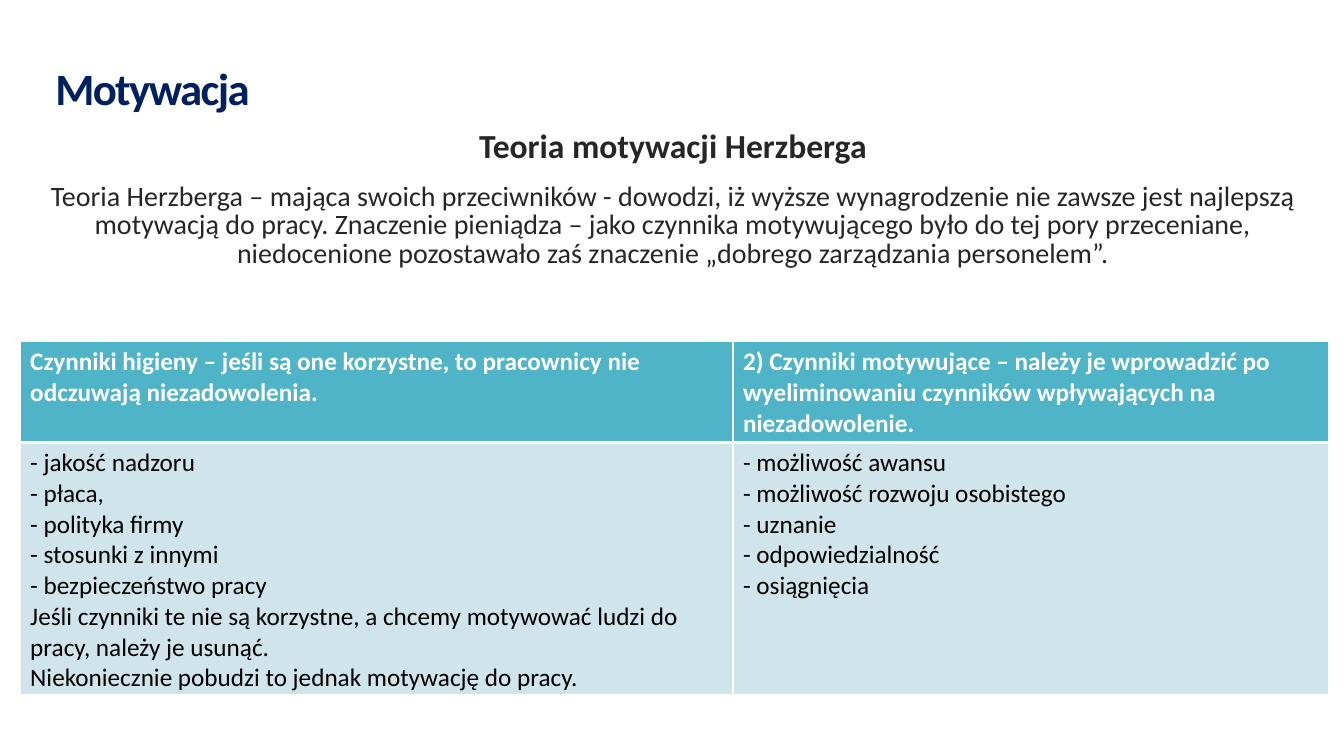
from lxml import etree
from pptx import Presentation
from pptx import util as u
from pptx.dml.color import RGBColor
from pptx.enum import text
from pptx.oxml.ns import qn

NAVY, DARK, BLACK, WHITE = "002060", "262626", "000000", "FFFFFF"
TEAL, PALE = "50B4C8", "D0E5EB"
FACTORS = [
    ("Czynniki higieny – jeśli są one korzystne, to pracownicy nie odczuwają niezadowolenia.",
     ["- jakość nadzoru", "- płaca,", "- polityka firmy", "- stosunki z innymi",
      "- bezpieczeństwo pracy",
      "Jeśli czynniki te nie są korzystne, a chcemy motywować ludzi do pracy, należy je usunąć.",
      "Niekoniecznie pobudzi to jednak motywację do pracy."]),
    ("2) Czynniki motywujące – należy je wprowadzić po wyeliminowaniu czynników "
     "wpływających na niezadowolenie.",
     ["- możliwość awansu", "- możliwość rozwoju osobistego", "- uznanie",
      "- odpowiedzialność", "- osiągnięcia"]),
]


def color(value):
    """Turn a hex string into a colour."""
    return RGBColor.from_string(value)


def write(frame, words, size=18, ink=BLACK, bold=False, align=None, line=None,
          before=None, indent=None, tracking=None):
    """Add one formatted paragraph to a text frame."""
    para = frame.paragraphs[0] if not frame.text else frame.add_paragraph()
    para.alignment = align
    para.line_spacing = line
    if before is not None:
        para.space_before = u.Pt(before)
    if indent is not None:
        para._p.get_or_add_pPr().set("marL", str(u.Inches(indent)))
    span = para.add_run()
    span.text = words
    span.font.name = "Calibri"
    span.font.size = u.Pt(size)
    span.font.bold = bold
    span.font.color.rgb = color(ink)
    if tracking is not None:
        span._r.get_or_add_rPr().set("spc", str(round(tracking * 100)))


def add_frame(page, box, anchor):
    """Add a wrapping text box and return its text frame."""
    frame = page.shapes.add_textbox(*map(u.Inches, box)).text_frame
    frame.word_wrap = True
    frame.vertical_anchor = anchor
    return frame


def add_title(page, box):
    """Place the slide title."""
    frame = add_frame(page, box, text.MSO_ANCHOR.MIDDLE)
    write(frame, "Motywacja", size=32, ink=NAVY, bold=True, line=0.85, tracking=-1.2)


def add_theory(page, box):
    """Place the centred heading and its explanation."""
    frame = add_frame(page, box, text.MSO_ANCHOR.TOP)
    style = dict(ink=DARK, align=text.PP_ALIGN.CENTER, line=0.85, before=13, indent=0.1)
    write(frame, "Teoria motywacji Herzberga", size=24, bold=True, **style)
    write(frame, "Teoria Herzberga – mająca swoich przeciwników - dowodzi, iż wyższe "
          "wynagrodzenie nie zawsze jest najlepszą motywacją do pracy. Znaczenie pieniądza "
          "– jako czynnika motywującego było do tej pory przeceniane, niedocenione "
          "pozostawało zaś znaczenie „dobrego zarządzania personelem”.", size=20, **style)


def fill_cell(cell, lines, fill, ink, bold, widths):
    """Write a cell's lines and set its fill and white borders."""
    for words in lines:
        write(cell.text_frame, words, ink=ink, bold=bold)
    props = cell._tc.get_or_add_tcPr()
    for side, width in zip("LRTB", widths):
        border = etree.SubElement(props, qn(f"a:ln{side}"), w=str(u.Pt(width)))
        solid = etree.SubElement(border, qn("a:solidFill"))
        etree.SubElement(solid, qn("a:srgbClr"), val=WHITE)
    cell.fill.solid()
    cell.fill.fore_color.rgb = color(fill)


def add_factors(page, box, columns, rows):
    """Place the table that compares the two groups of factors."""
    table = page.shapes.add_table(2, len(FACTORS), *map(u.Inches, box)).table
    for row, height in zip(table.rows, rows):
        row.height = u.Inches(height)
    for index, (heading, factors) in enumerate(FACTORS):
        table.columns[index].width = u.Inches(columns[index])
        fill_cell(table.cell(0, index), [heading], TEAL, WHITE, True, (1, 1, 1, 3))
        fill_cell(table.cell(1, index), factors, PALE, BLACK, False, (1, 1, 3, 1))


def main():
    """Build and save the slide."""
    deck = Presentation()
    deck.slide_width, deck.slide_height = u.Inches(13.33), u.Inches(7.5)
    page = deck.slides.add_slide(deck.slide_layouts[6])
    add_title(page, (0.45, 0.36, 6.5, 1.1))
    add_theory(page, (0.06, 1.25, 13.13, 1.32))
    add_factors(page, (0.2, 3.39, 12.98, 3.5), columns=(7.07, 5.91), rows=(1, 2.5))
    deck.save("out.pptx")


if __name__ == "__main__":
    main()
